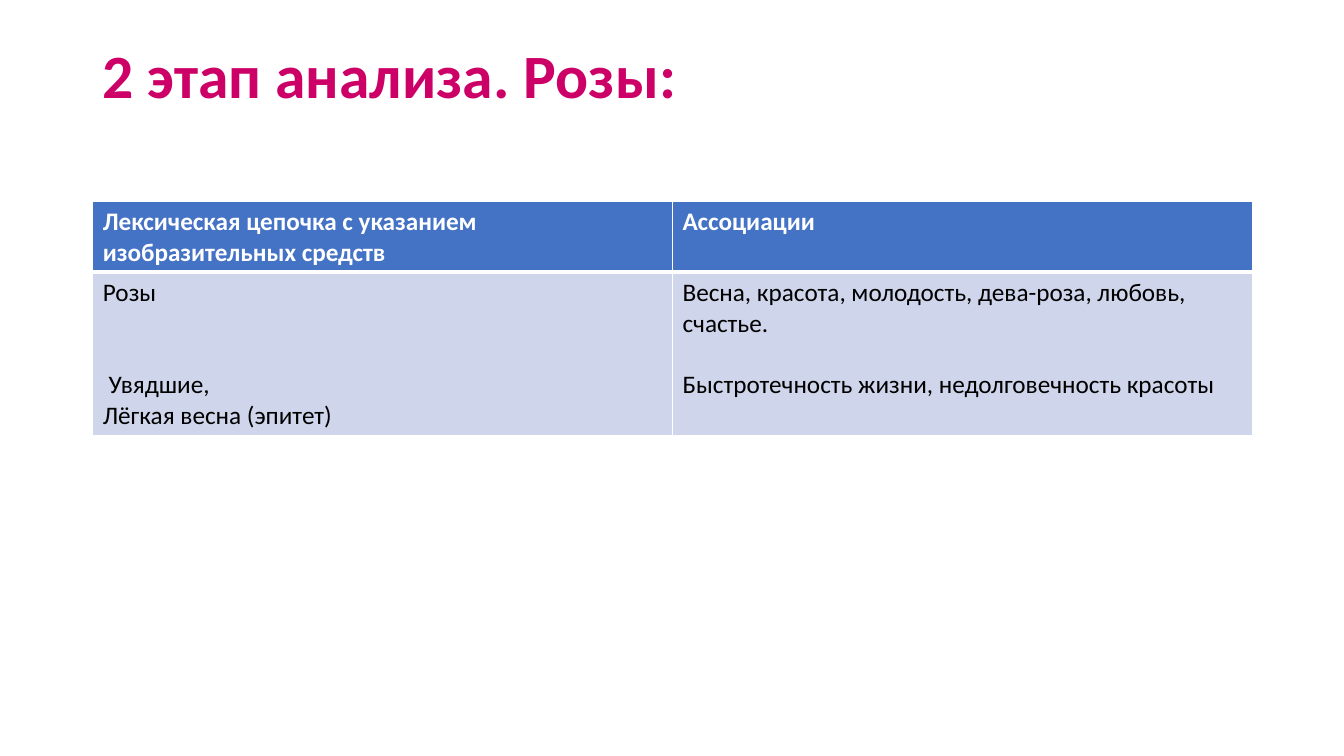
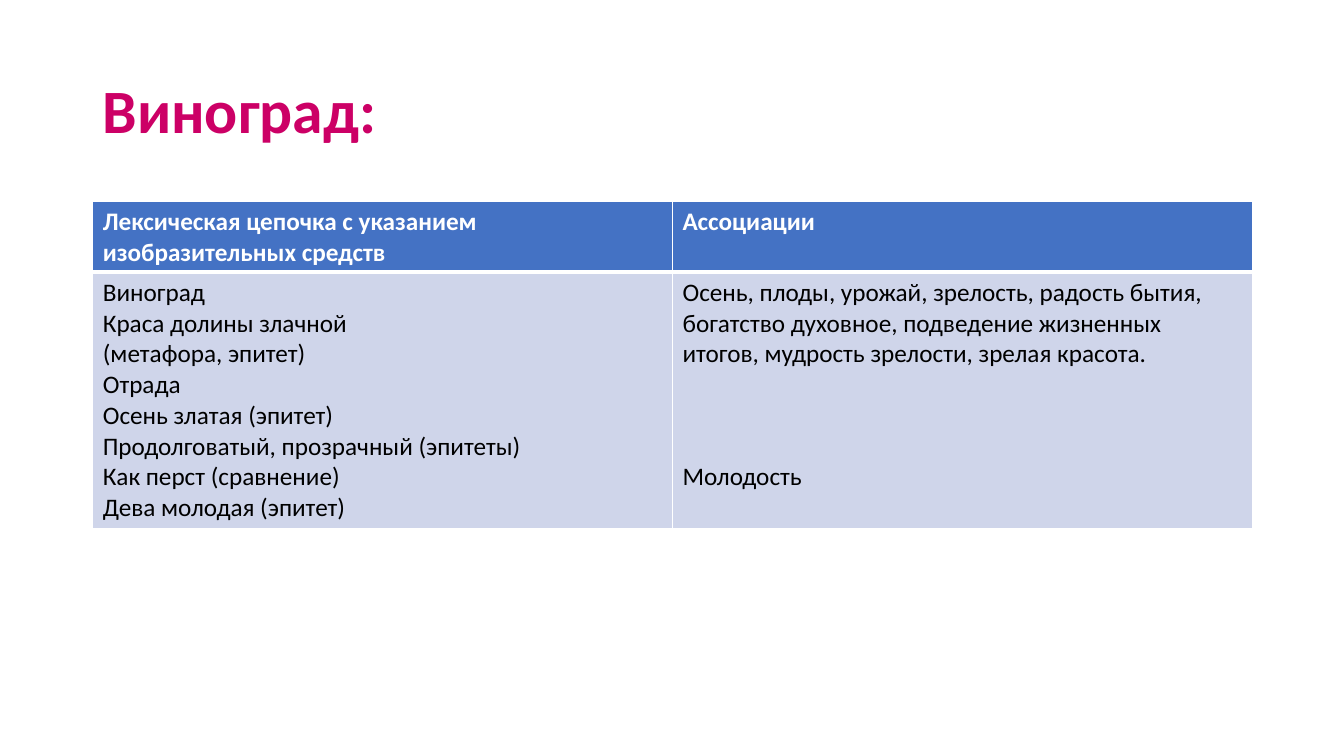
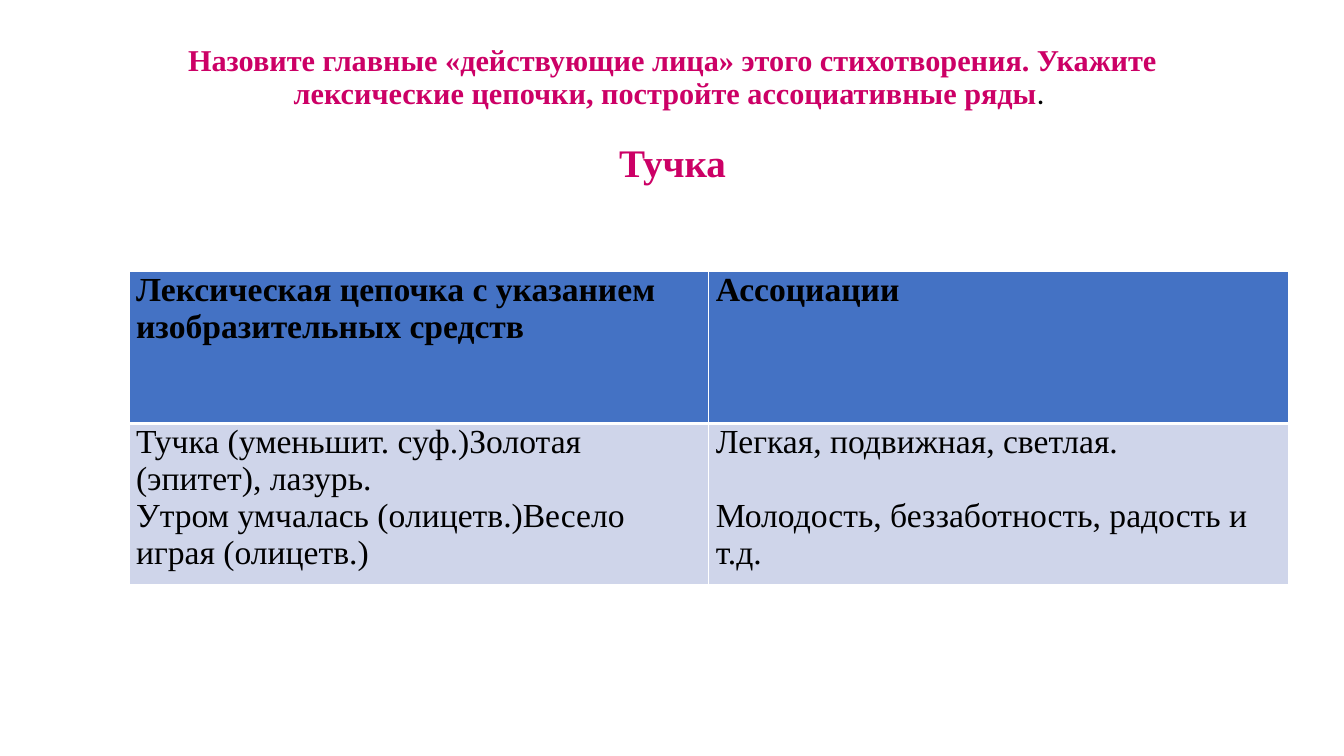
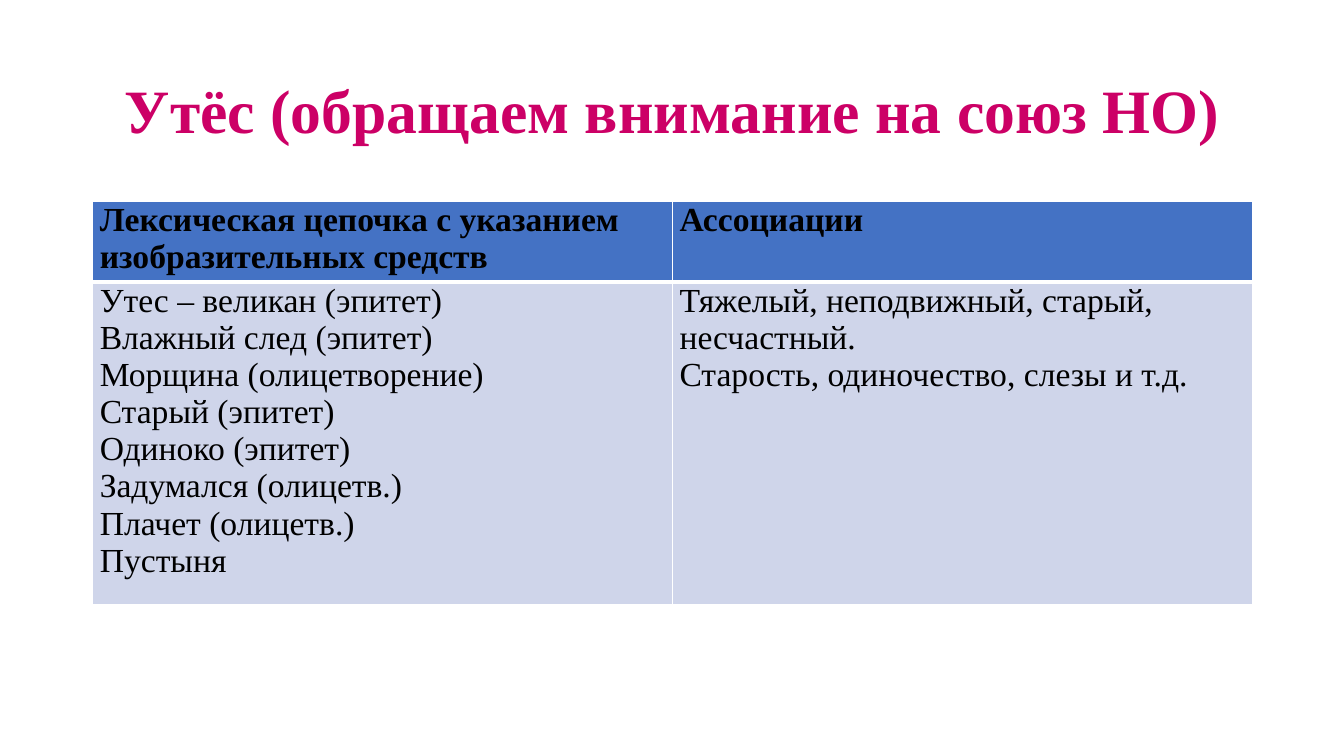
"""Build four slides that pair lexical chains with their associations."""
from dataclasses import dataclass

from lxml import etree
from pptx import Presentation
from pptx import util as u
from pptx.dml import color as dml
from pptx.enum import text
from pptx.oxml import ns


@dataclass(frozen=True)
class Theme:
    """Colours, fonts, type sizes and shared measures."""
    accent: str = "CC0066"
    header: str = "4472C4"
    body: str = "CFD5EA"
    white: str = "FFFFFF"
    black: str = "000000"
    sans: str = "Calibri"
    serif: str = "Times New Roman"
    title_size: float = 44
    question_size: float = 21.6
    topic_size: float = 27.9
    left: float = 0.92
    width: float = 11.5
    thin: float = 1
    thick: float = 3


@dataclass(frozen=True)
class TableStyle:
    """Type and cell margins of one kind of table."""
    font: str
    size: float
    header_color: str
    side: float
    edge: float


THEME = Theme()
SANS_TABLE = TableStyle(THEME.sans, 18, THEME.white, 0.1, 0.05)
SERIF_TABLE = TableStyle(THEME.serif, 24, THEME.black, 0.07, 0)
HEADINGS = ("Лексическая цепочка с указанием изобразительных средств", "Ассоциации")


def add_span(para, words, *, font, size, color=THEME.black, bold=False):
    """Append formatted text to a paragraph."""
    span = para.add_run()
    span.text = words
    span.font.name = font
    span.font.size = u.Pt(size)
    span.font.bold = bold
    span.font.color.rgb = dml.RGBColor.from_string(color)


def write(frame, words, *, align=text.PP_ALIGN.LEFT, spacing=1.0, gap=0, **style):
    """Write the next paragraph of a text frame and return it."""
    para = frame.paragraphs[0]
    if para.runs:
        para = frame.add_paragraph()
    para.alignment = align
    para.line_spacing = spacing
    para.space_before = u.Pt(gap)
    add_span(para, words, **style)
    return para


def add_title_box(page, anchor=text.MSO_ANCHOR.MIDDLE):
    """Add the shared title area and return its text frame."""
    box = page.shapes.add_textbox(u.Inches(THEME.left), u.Inches(0.4),
                                  u.Inches(THEME.width), u.Inches(1.45))
    box.text_frame.word_wrap = True
    box.text_frame.vertical_anchor = anchor
    return box.text_frame


def write_title(frame, words, *, font=THEME.sans, size=THEME.title_size, **layout):
    """Write a paragraph in the shared title style."""
    return write(frame, words, font=font, size=size, color=THEME.accent,
                 bold=True, spacing=0.9, **layout)


def set_borders(cell, top, bottom):
    """Draw white lines around a cell."""
    properties = cell._tc.get_or_add_tcPr()
    widths = {"L": THEME.thin, "R": THEME.thin, "T": top, "B": bottom}
    for side, width in widths.items():
        line = etree.SubElement(properties, ns.qn(f"a:ln{side}"), w=str(u.Pt(width)))
        fill = etree.SubElement(line, ns.qn("a:solidFill"))
        etree.SubElement(fill, ns.qn("a:srgbClr"), val=THEME.white)


def fill_cell(cell, lines, style, is_header):
    """Format a cell and write its (text, gap before) lines."""
    top, bottom = (THEME.thin, THEME.thick) if is_header else (THEME.thick, THEME.thin)
    set_borders(cell, top, bottom)
    cell.fill.solid()
    cell.fill.fore_color.rgb = dml.RGBColor.from_string(
        THEME.header if is_header else THEME.body)
    cell.margin_left = cell.margin_right = u.Inches(style.side)
    cell.margin_top = cell.margin_bottom = u.Inches(style.edge)
    for words, gap in lines:
        write(cell.text_frame, words, gap=gap, font=style.font, size=style.size,
              color=style.header_color if is_header else THEME.black, bold=is_header)


def add_chain_table(page, style, heights, chain, associations, left=THEME.left, top=2.0):
    """Add a table of a lexical chain and its associations."""
    table = page.shapes.add_table(2, 2, u.Inches(left), u.Inches(top),
                                  u.Inches(THEME.width), u.Inches(sum(heights))).table
    table.horz_banding = False
    for row, height in zip(table.rows, heights):
        row.height = u.Inches(height)
    for column, (heading, lines) in enumerate(zip(HEADINGS, (chain, associations))):
        fill_cell(table.cell(0, column), [(heading, 0)], style, True)
        fill_cell(table.cell(1, column), lines, style, False)


def plain(*lines):
    """Return lines without extra space between them."""
    return [(words, 0) for words in lines]


def build_roses(page):
    """Build the slide about the roses."""
    write_title(add_title_box(page, text.MSO_ANCHOR.TOP), "2 этап анализа. Розы:")
    add_chain_table(
        page, SANS_TABLE, (0.7, 1.62),
        [("Розы", 0), (" Увядшие,", 44), ("Лёгкая весна (эпитет)", 0)],
        [("Весна, красота, молодость, дева-роза, любовь, счастье.", 0),
         ("Быстротечность жизни, недолговечность красоты", 22)])


def build_grapes(page):
    """Build the slide about the grapes."""
    write_title(add_title_box(page), "Виноград:")
    add_chain_table(
        page, SANS_TABLE, (0.7, 2.54),
        plain("Виноград", "Краса долины злачной", "(метафора, эпитет)", "Отрада",
              "Осень златая (эпитет)", "Продолговатый, прозрачный (эпитеты)",
              "Как перст (сравнение)", "Дева молодая (эпитет)"),
        [("Осень, плоды, урожай, зрелость, радость бытия, богатство духовное, "
          "подведение жизненных итогов, мудрость зрелости, зрелая красота.", 0),
         ("Молодость", 66)])


def build_cloud(page):
    """Build the slide about the cloud."""
    frame = add_title_box(page, text.MSO_ANCHOR.TOP)
    question = write_title(
        frame, "Назовите главные «действующие лица» этого стихотворения. Укажите "
        "лексические цепочки, постройте ассоциативные ряды",
        font=THEME.serif, size=THEME.question_size, align=text.PP_ALIGN.CENTER)
    add_span(question, ". ", font=THEME.sans, size=THEME.question_size)
    write_title(frame, "Тучка", font=THEME.serif, size=THEME.topic_size,
                align=text.PP_ALIGN.CENTER, gap=24)
    add_chain_table(
        page, SERIF_TABLE, (1.51, 1.47),
        plain("Тучка (уменьшит. суф.)Золотая (эпитет), лазурь.",
              "Утром умчалась (олицетв.)Весело играя (олицетв.)"),
        [("Легкая, подвижная, светлая.", 0),
         ("Молодость, беззаботность, радость и т.д.", 26.5)],
        left=1.28, top=2.69)


def build_cliff(page):
    """Build the slide about the cliff."""
    write_title(add_title_box(page), "Утёс (обращаем внимание на союз НО)",
                font=THEME.serif, align=text.PP_ALIGN.CENTER)
    add_chain_table(
        page, SERIF_TABLE, (0.73, 2.95),
        plain("Утес – великан (эпитет)", "Влажный след (эпитет)",
              "Морщина (олицетворение)", "Старый (эпитет)", "Одиноко (эпитет)",
              "Задумался (олицетв.)", "Плачет (олицетв.)", "Пустыня"),
        plain("Тяжелый, неподвижный, старый, несчастный.",
              "Старость, одиночество, слезы и т.д."))


def main():
    """Build and save the deck."""
    deck = Presentation()
    deck.slide_width, deck.slide_height = u.Inches(13.33), u.Inches(7.5)
    for build in (build_roses, build_grapes, build_cloud, build_cliff):
        build(deck.slides.add_slide(deck.slide_layouts[6]))
    deck.save("out.pptx")


if __name__ == "__main__":
    main()
